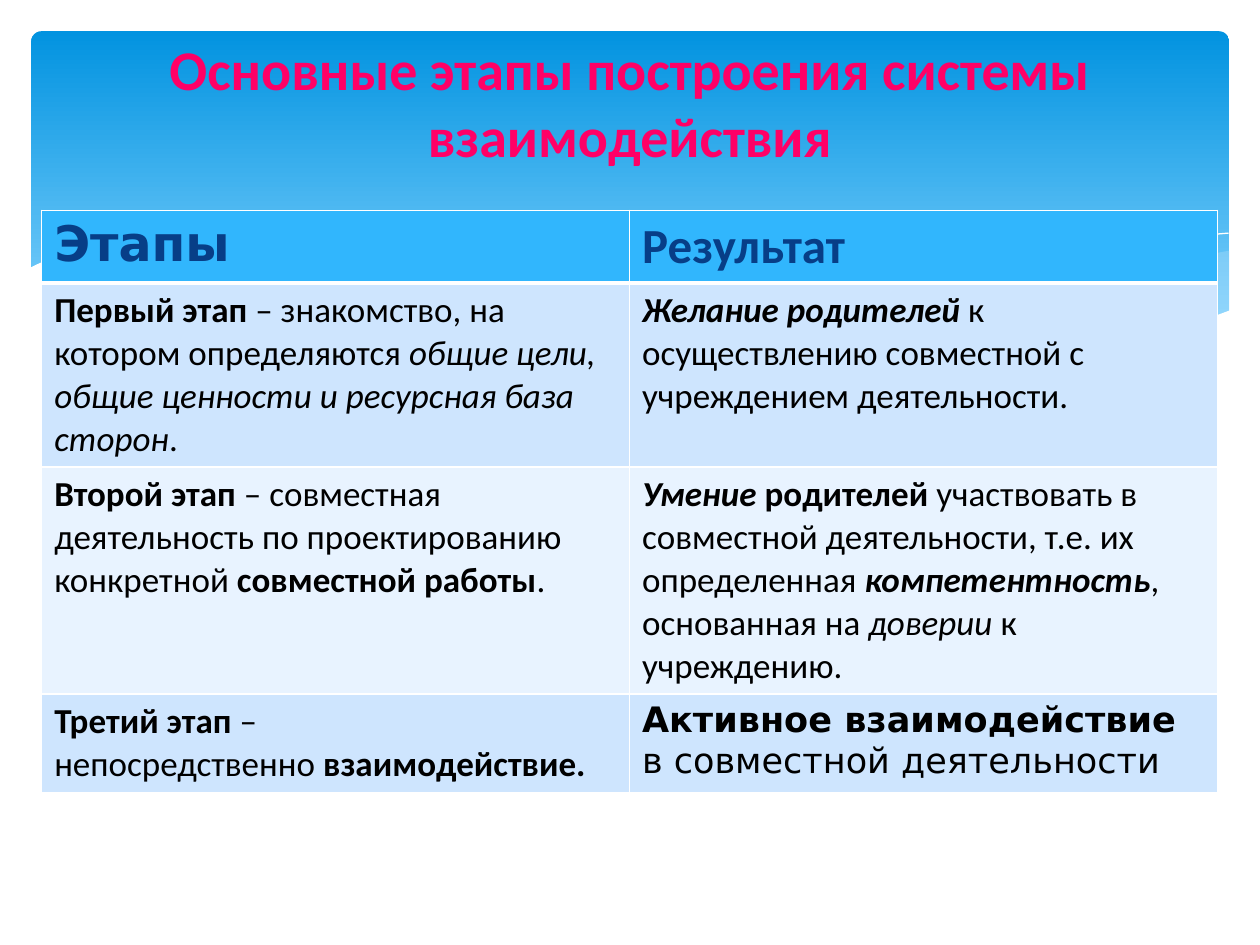
from lxml.etree import SubElement
from pptx import Presentation
from pptx.dml.color import RGBColor
from pptx.enum.shapes import MSO_SHAPE as Shape
from pptx.enum.text import MSO_ANCHOR as Anchor, MSO_AUTO_SIZE as Auto, PP_ALIGN as Align
from pptx.oxml import parse_xml
from pptx.oxml.ns import nsdecls, qn
from pptx.util import Cm, Pt

WHITE = RGBColor(0xFF, 0xFF, 0xFF)
BLACK = RGBColor(0, 0, 0)
PINK = RGBColor(0xFF, 0x00, 0x66)
NAVY = RGBColor(0x07, 0x3E, 0x87)
HEAD = RGBColor(0x31, 0xB6, 0xFD)
BANDS = [RGBColor(0xCE, 0xE5, 0xFE), RGBColor(0xE8, 0xF3, 0xFF)]
DEEP = RGBColor(0x02, 0x93, 0xE0)
SKY = RGBColor(0x83, 0xD3, 0xFE)
MIST = RGBColor(0xC6, 0xE7, 0xFC)
SANS, WIDE = "Calibri", "DejaVu Sans"

# Content: a cell is (font, paragraphs), a paragraph is runs of (text, style);
# "~" stands for a no-break space
TITLE = "Основные этапы построения системы взаимодействия"
ROWS = [
    [(WIDE, [[("Этапы", "b")]]), (SANS, [[("Результат", "b")]])],
    [(SANS, [[("Первый этап", "b"),
              ("~– знакомство, на котором определяются~", ""),
              ("общие цели, общие ценности и ресурсная база сторон", "i"),
              (".", "")]]),
     (SANS, [[("Желание родителей", "bi"),
              ("~к осуществлению совместной с учреждением деятельности.", "")]])],
    [(SANS, [[("Второй этап", "b"),
              ("~– совместная деятельность по проектированию конкретной", ""),
              (" совместной работы", "b"), (".", "")]]),
     (SANS, [[("Умение", "bi"), ("~родителей ", "b"),
              ("участвовать в совместной деятельности, т.е. их определенная~", ""),
              ("компетентность", "bi"), (",~", "")],
             [("основанная на~", ""), ("доверии~", "i"), ("к учреждению.", "")]])],
    [(SANS, [[("Третий этап", "b"), ("~– непосредственно~", ""),
              ("взаимодействие.~", "b")]]),
     (WIDE, [[("Активное взаимодействие ", "b"),
              ("в совместной деятельности", "")]])],
]
HEIGHTS = [1.45, 3.63, 4.5, 1.96]
COL = 11.85

# Waves: points in hundredths of an inch, fill, opacity in percent
WAVES = [
    ([(975, 199), (921, 209), (861, 223), (805, 237), (753, 248), (706, 257),
      (661, 265), (691, 269), (732, 274), (769, 277), (803, 278), (835, 277),
      (863, 275), (889, 272), (913, 267), (935, 261), (963, 252), (976, 247),
      (976, 199)], MIST, 29),
    ([(893, 273), (837, 265), (775, 254), (706, 240), (629, 222), (584, 211),
      (541, 203), (501, 196), (465, 191), (420, 187), (380, 186), (344, 186),
      (313, 188), (286, 191), (323, 196), (362, 203), (404, 211), (449, 222),
      (530, 240), (584, 252), (634, 261), (680, 268), (722, 274), (761, 277),
      (796, 278), (838, 278), (867, 276)], MIST, 40),
    ([(309, 195), (335, 191), (363, 189), (401, 187), (450, 188), (489, 190),
      (533, 194), (582, 200), (636, 208), (695, 219), (760, 233), (831, 251),
      (907, 272)], None, 100),
    ([(613, 257), (652, 246), (695, 235), (748, 223), (806, 210), (866, 199),
      (910, 192), (951, 187), (975, 185)], None, 100),
    ([(977, 246), (950, 256), (920, 265), (887, 271), (850, 275), (809, 277),
      (761, 275), (708, 270), (647, 262), (579, 250), (503, 233), (418, 213),
      (365, 202), (315, 194), (271, 188), (230, 185), (193, 184), (161, 184),
      (132, 186), (106, 189), (85, 193), (67, 197), (52, 201), (40, 205),
      (29, 210), (23, 213), (23, 329), (977, 329)], WHITE, 100),
]


def write(par, text, font=SANS, size=20, color=BLACK, style=""):
    run = par.add_run()
    run.text = text.replace("~", chr(160))
    face = run.font
    face.name, face.size = font, Pt(size)
    face.bold, face.italic = "b" in style, "i" in style
    face.color.rgb = color


def wave(shapes, points, fill, alpha):
    pen = shapes.build_freeform(*points[0], scale=Cm(0.0254))
    pen.add_line_segments(points[1:], close=fill is not None)
    form = pen.convert_to_shape()
    form.shadow.inherit = False
    if fill is None:
        form.fill.background()
        form.line.color.rgb = WHITE
        form.line.width = Pt(0)
        return
    form.line.fill.background()
    form.fill.solid()
    form.fill.fore_color.rgb = fill
    if alpha < 100:
        tint = next(form.element.iter(qn("a:srgbClr")))
        SubElement(tint, qn("a:alpha"), val=str(alpha * 1000))


def border(cell, row):
    widths = {"L": 1, "R": 1, "T": 3 if row == 1 else 1, "B": 3 if row == 0 else 1}
    props = cell._tc.get_or_add_tcPr()
    for i, (side, width) in enumerate(widths.items()):
        props.insert(i, parse_xml(
            f'<a:ln{side} {nsdecls("a")} w="{Pt(width)}"><a:solidFill>'
            f'<a:srgbClr val="{WHITE}"/></a:solidFill></a:ln{side}>'))


def main():
    deck = Presentation()
    deck.slide_width, deck.slide_height = Cm(25.4), Cm(19.05)
    slide = deck.slides.add_slide(deck.slide_layouts[5])
    shapes = slide.shapes

    # Backdrop
    back = shapes.add_shape(Shape.ROUNDED_RECTANGLE,
                            Cm(0.63), Cm(0.63), Cm(24.15), Cm(6.86))
    back.adjustments[0] = 0.03
    back.shadow.inherit = False
    back.line.fill.background()
    back.fill.gradient()
    back.fill.gradient_angle = 270
    for stop, color, pos in zip(back.fill.gradient_stops, (DEEP, SKY), (0, 0.9)):
        stop.color.rgb, stop.position = color, pos
    for points, fill, alpha in WAVES:
        wave(shapes, points, fill, alpha)

    # Table
    frame = shapes.add_table(len(ROWS), 2, Cm(0.84), Cm(4.24),
                             Cm(2 * COL), Cm(sum(HEIGHTS)))
    table = frame.table
    for col in table.columns:
        col.width = Cm(COL)
    for r, (row, height) in enumerate(zip(ROWS, HEIGHTS)):
        table.rows[r].height = Cm(height)
        size, color = (20, BLACK) if r else (28, NAVY)
        for c, (font, pars) in enumerate(row):
            cell = table.cell(r, c)
            cell.fill.solid()
            cell.fill.fore_color.rgb = BANDS[(r - 1) % 2] if r else HEAD
            border(cell, r)
            for n, runs in enumerate(pars):
                box = cell.text_frame
                par = box.add_paragraph() if n else box.paragraphs[0]
                for text, style in runs:
                    write(par, text, font=font, size=size, color=color, style=style)

    # Title, brought to the front
    title = shapes.title
    title.left, title.top, title.width, title.height = (
        Cm(1.27), Cm(0.63), Cm(22.86), Cm(3.18))
    box = title.text_frame
    box.word_wrap, box.auto_size = True, Auto.NONE
    box.vertical_anchor, box.margin_top = Anchor.TOP, Cm(0.07)
    par = box.paragraphs[0]
    par.alignment = Align.CENTER
    write(par, TITLE, size=32, color=PINK, style="b")
    title.element.getparent().append(title.element)

    deck.save("out.pptx")


if __name__ == "__main__":
    main()
